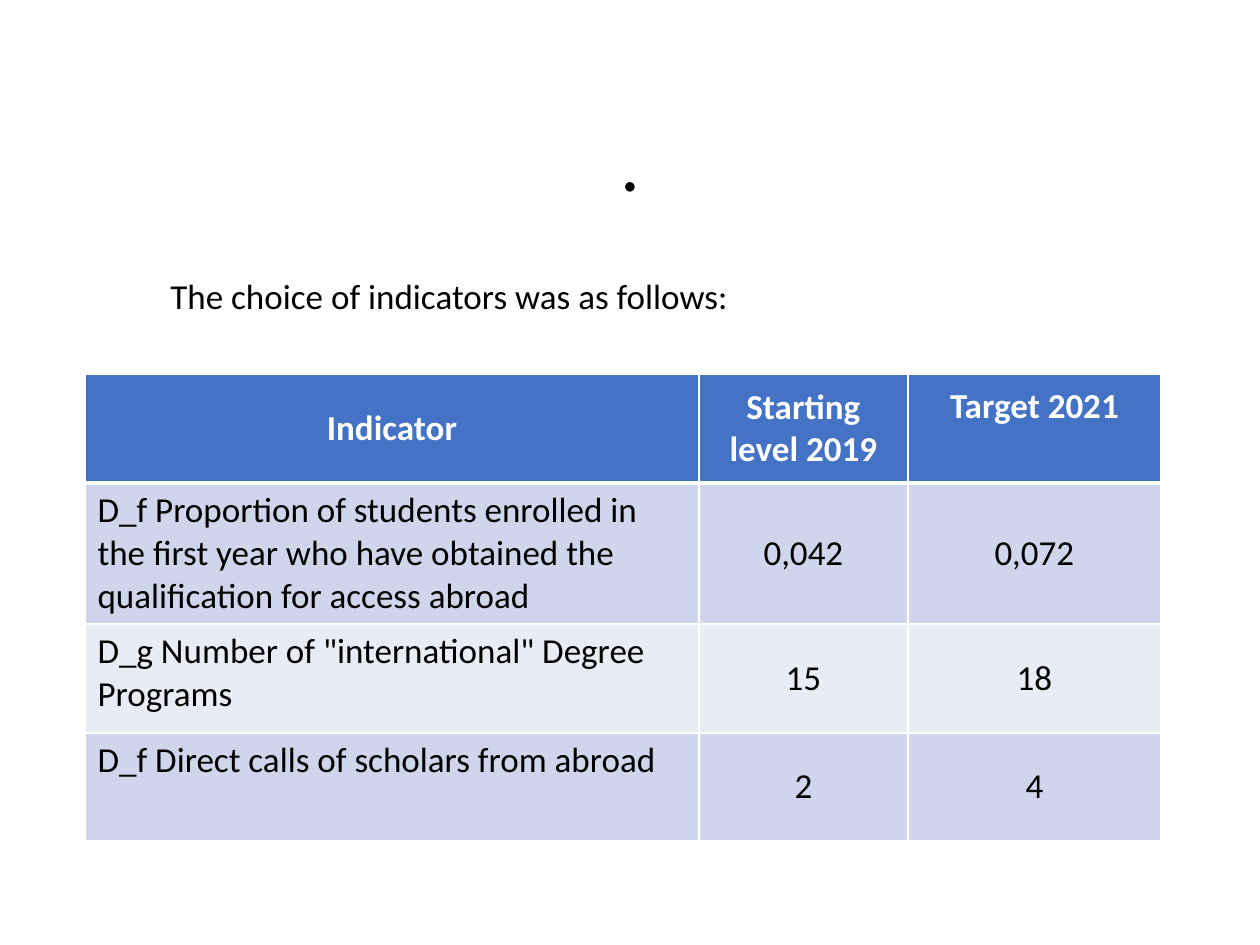
import lxml.etree
import pptx
import pptx.dml.color
import pptx.enum.text
import pptx.oxml.ns
import pptx.util

SCALE = 914400 / 126
FONT = "Calibri"
ALIGN = pptx.enum.text.PP_ALIGN
ANCHOR = pptx.enum.text.MSO_ANCHOR
BLACK, WHITE = "000000", "FFFFFF"
HEADER_FILL = "4472C4"
BAND_FILLS = ["CFD5EA", "E9EBF5"]
COLUMN_WIDTHS = [614, 209, 253]
ROW_HEIGHTS = [109, 141, 109, 108]
ROWS = [
    ["Indicator", "Starting level 2019", "Target 2021"],
    ["D_f Proportion of students enrolled in the first year who have obtained "
     "the qualification for access abroad", "0,042", "0,072"],
    ['D_g Number of "international" Degree Programs', "15", "18"],
    ["D_f Direct calls of scholars from abroad", "2", "4"],
]


def px(length):
    return pptx.util.Emu(round(length * SCALE))


def color(value):
    return pptx.dml.color.RGBColor.from_string(value)


class SlideBuilder:
    def __init__(self, deck):
        self.slide = deck.slides.add_slide(deck.slide_layouts[6])

    def style(self, para, size, hue, align, bold=False):
        para.alignment = align
        for span in para.runs:
            span.font.name = FONT
            span.font.size = pptx.util.Pt(size)
            span.font.bold = bold
            span.font.color.rgb = color(hue)

    def text(self, left, top, width, height, words, size, align, anchor):
        box = self.slide.shapes.add_textbox(px(left), px(top), px(width), px(height))
        frame = box.text_frame
        frame.word_wrap = True
        frame.vertical_anchor = anchor
        frame.text = words
        para = frame.paragraphs[0]
        para.line_spacing = 0.9
        self.style(para, size, BLACK, align)

    def borders(self, cell, widths):
        properties = cell._tc.get_or_add_tcPr()
        qn = pptx.oxml.ns.qn
        for index, (side, width) in enumerate(zip("LRTB", widths)):
            line = lxml.etree.Element(qn(f"a:ln{side}"), w=str(pptx.util.Pt(width)))
            fill = lxml.etree.SubElement(line, qn("a:solidFill"))
            lxml.etree.SubElement(fill, qn("a:srgbClr"), val=WHITE)
            properties.insert(index, line)

    def table(self, left, top, widths, heights, rows):
        frame = self.slide.shapes.add_table(
            len(rows), len(widths), px(left), px(top), px(sum(widths)), px(sum(heights)))
        table = frame.table
        for column, width in zip(table.columns, widths):
            column.width = px(width)
        for row, height in zip(table.rows, heights):
            row.height = px(height)
        for r, values in enumerate(rows):
            header = r == 0
            for c, value in enumerate(values):
                cell = table.cell(r, c)
                label = c == 0 and not header
                cell.text = value
                cell.vertical_anchor = ANCHOR.TOP if label else ANCHOR.MIDDLE
                cell.fill.solid()
                cell.fill.fore_color.rgb = color(
                    HEADER_FILL if header else BAND_FILLS[(r - 1) % 2])
                self.style(cell.text_frame.paragraphs[0], 20, WHITE if header else BLACK,
                           ALIGN.LEFT if label else ALIGN.CENTER, header)
                self.borders(cell, [1, 1, 3 if r == 1 else 1, 3 if header else 1])
        return table


def main():
    deck = pptx.Presentation()
    deck.slide_width, deck.slide_height = px(1260), px(945)
    page = SlideBuilder(deck)
    page.text(158, 115, 945, 100, ".", 45, ALIGN.CENTER, ANCHOR.BOTTOM)
    page.text(158, 273, 945, 100, "The choice of indicators was as follows:", 20,
              ALIGN.JUSTIFY, ANCHOR.TOP)
    table = page.table(85, 374, COLUMN_WIDTHS, ROW_HEIGHTS, ROWS)
    target = table.cell(0, 2)
    target.vertical_anchor = ANCHOR.TOP
    target.margin_top = px(11)
    deck.save("out.pptx")


if __name__ == "__main__":
    main()
